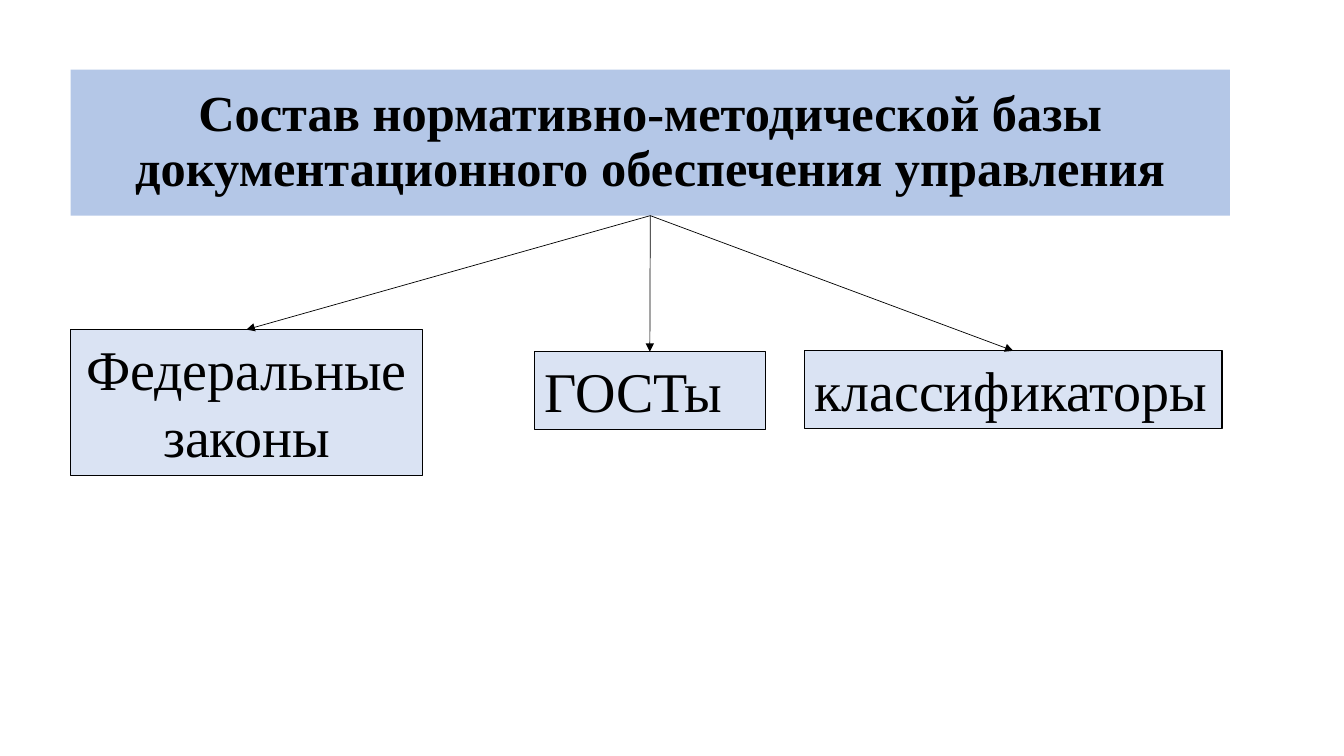
from dataclasses import dataclass

from lxml import etree
from pptx import Presentation
from pptx import util as u
from pptx.dml.color import RGBColor
from pptx.enum import shapes, text
from pptx.oxml.ns import qn
from pptx.shapes.autoshape import Shape
from pptx.slide import Slide

BLACK = RGBColor(0x00, 0x00, 0x00)
TITLE_BLUE = RGBColor(0xB4, 0xC7, 0xE7)
BRANCH_BLUE = RGBColor(0xDA, 0xE3, 0xF3)
FONT = "Times New Roman"

PAGE_WIDTH = u.Inches(13.33)
PAGE_HEIGHT = u.Inches(7.5)
COLUMN = PAGE_WIDTH / 100
ROW = PAGE_HEIGHT / 100


@dataclass(frozen=True)
class Panel:
    """A filled text panel, placed in hundredths of the page."""
    wording: str
    left: float
    top: float
    width: float
    height: float
    fill: RGBColor = BRANCH_BLUE
    size: int = 40
    bold: bool = False
    outlined: bool = True
    wrap: bool = True
    align: text.PP_ALIGN = text.PP_ALIGN.LEFT
    anchor: text.MSO_ANCHOR = text.MSO_ANCHOR.TOP
    line_spacing: float = 1.0


TITLE = Panel(
    "Состав нормативно-методической базы документационного обеспечения управления",
    5.25, 9.2, 86.27, 19.33, fill=TITLE_BLUE, size=36, bold=True, outlined=False,
    align=text.PP_ALIGN.CENTER, anchor=text.MSO_ANCHOR.MIDDLE, line_spacing=0.9,
)
BRANCHES = (
    Panel("Федеральные законы", 5.25, 43.6, 26.18, 19.33, align=text.PP_ALIGN.CENTER),
    Panel("ГОСТы", 39.76, 46.53, 17.18, 10.27),
    Panel("классификаторы", 59.86, 46.4, 31.06, 10.27, wrap=False),
)


def add_panel(page: Slide, panel: Panel) -> Shape:
    box = page.shapes.add_textbox(
        round(panel.left * COLUMN), round(panel.top * ROW),
        round(panel.width * COLUMN), round(panel.height * ROW),
    )
    box.fill.solid()
    box.fill.fore_color.rgb = panel.fill
    if panel.outlined:
        box.line.color.rgb = BLACK
        box.line.width = u.Pt(1)

    frame = box.text_frame
    frame.text = panel.wording
    frame.word_wrap = panel.wrap
    frame.vertical_anchor = panel.anchor
    para = frame.paragraphs[0]
    para.alignment = panel.align
    para.line_spacing = panel.line_spacing
    font = para.runs[0].font
    font.name = FONT
    font.size = u.Pt(panel.size)
    font.bold = panel.bold
    font.color.rgb = BLACK
    return box


def add_arrow(page: Slide, source: Shape, target: Shape) -> None:
    """Link the bottom centre of source to the top centre of target."""
    arrow = page.shapes.add_connector(
        shapes.MSO_CONNECTOR.STRAIGHT,
        source.left + source.width // 2, source.top + source.height,
        target.left + target.width // 2, target.top,
    )
    arrow.line.color.rgb = BLACK
    arrow.line.width = u.Pt(0.5)
    properties = arrow._element.spPr
    outline = properties.find(qn("a:ln"))
    etree.SubElement(outline, qn("a:tailEnd"), type="triangle")
    etree.SubElement(properties, qn("a:effectLst"))


def main() -> None:
    deck = Presentation()
    deck.slide_width = PAGE_WIDTH
    deck.slide_height = PAGE_HEIGHT
    page = deck.slides.add_slide(deck.slide_layouts[6])

    title = add_panel(page, TITLE)
    branches = [add_panel(page, branch) for branch in BRANCHES]
    for branch in branches:
        add_arrow(page, title, branch)

    deck.save("out.pptx")


if __name__ == "__main__":
    main()
